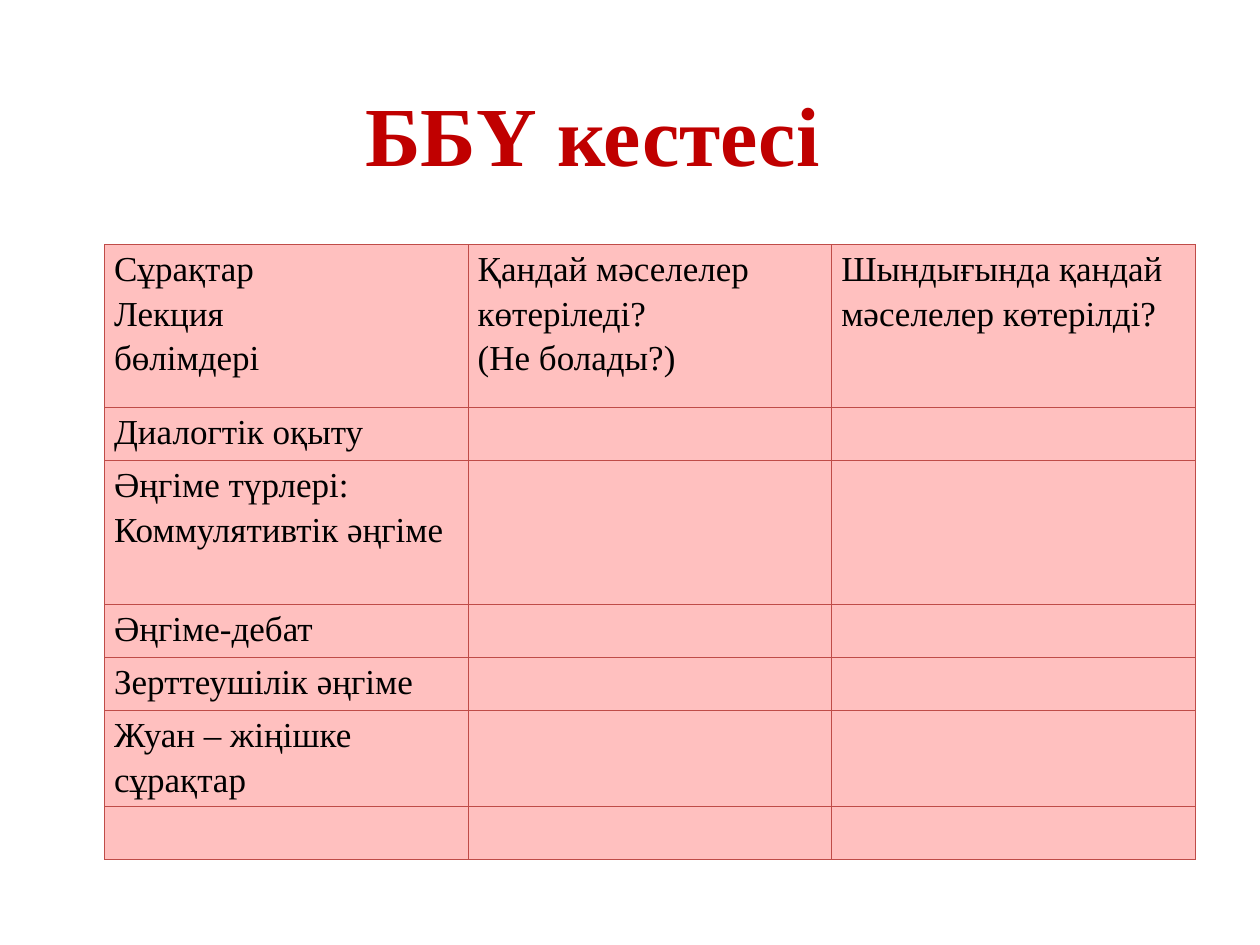
from lxml.etree import SubElement
from pptx import Presentation
from pptx.dml.color import RGBColor
from pptx.enum.text import MSO_ANCHOR, MSO_AUTO_SIZE
from pptx.oxml.ns import qn
from pptx.util import Cm, Pt

TITLE = "ББҮ кестесі"
HEADERS = [
    ["Сұрақтар", "Лекция", "бөлімдері"],
    ["Қандай мәселелер көтеріледі?", "(Не болады?)"],
    ["Шындығында қандай мәселелер көтерілді?"],
]
TOPICS = [  # lines of the first column, row height in cm
    (["Диалогтік оқыту"], 1.07),
    (["Әңгіме түрлері:", "Коммулятивтік әңгіме"], 2.9),
    (["Әңгіме-дебат"], 1.07),
    (["Зерттеушілік әңгіме"], 1.07),
    (["Жуан – жіңішке сұрақтар"], 1.93),
    ([], 1.07),
]
HEADER_HEIGHT = 3.29
COLUMN_WIDTH = 7.33
COLORS = {"title": "C00000", "text": "000000", "cell": "FFC0BF", "border": "BF4C48"}
FONT = "Times New Roman"


def write_text(frame, lines, size, color, bold=False, spacing=1.0):
    for index, line in enumerate(lines):
        paragraph = frame.add_paragraph() if index else frame.paragraphs[0]
        paragraph.line_spacing = spacing
        run = paragraph.add_run()
        run.text = line
        run.font.name = FONT
        run.font.size = Pt(size)
        run.font.bold = bold
        run.font.color.rgb = RGBColor.from_string(COLORS[color])


def add_borders(cell):
    """Put a thin line on all four sides; borders must precede the cell fill."""
    properties = cell._tc.get_or_add_tcPr()
    for side in ("a:lnL", "a:lnR", "a:lnT", "a:lnB"):
        line = SubElement(properties, qn(side), w=str(Pt(0.75)))
        fill = SubElement(line, qn("a:solidFill"))
        SubElement(fill, qn("a:srgbClr"), val=COLORS["border"])


def format_cell(cell):
    cell.margin_left = cell.margin_right = Cm(0.19)
    cell.margin_top = cell.margin_bottom = 0
    add_borders(cell)
    cell.fill.solid()
    cell.fill.fore_color.rgb = RGBColor.from_string(COLORS["cell"])


def add_topic_table(slide):
    rows = [HEADERS] + [[lines, [], []] for lines, _ in TOPICS]
    heights = [HEADER_HEIGHT] + [height for _, height in TOPICS]
    table = slide.shapes.add_table(
        len(rows), len(HEADERS), Cm(2.11), Cm(4.93),
        Cm(COLUMN_WIDTH * len(HEADERS)), Cm(sum(heights)),
    ).table
    for column in table.columns:
        column.width = Cm(COLUMN_WIDTH)
    for row_index, (row, height) in enumerate(zip(rows, heights)):
        table.rows[row_index].height = Cm(height)
        for column_index, lines in enumerate(row):
            cell = table.cell(row_index, column_index)
            format_cell(cell)
            write_text(cell.text_frame, lines, size=20, color="text", spacing=1.15)


def add_title(slide):
    frame = slide.shapes.add_textbox(Cm(7.11), Cm(1.52), Cm(9.75), Cm(2.31)).text_frame
    frame.word_wrap = False
    frame.auto_size = MSO_AUTO_SIZE.SHAPE_TO_FIT_TEXT
    frame.vertical_anchor = MSO_ANCHOR.MIDDLE
    write_text(frame, [TITLE], size=48, color="title", bold=True)


def main():
    presentation = Presentation()
    presentation.slide_width, presentation.slide_height = Cm(25.4), Cm(19.05)
    slide = presentation.slides.add_slide(presentation.slide_layouts[6])
    add_topic_table(slide)
    add_title(slide)
    presentation.save("out.pptx")


if __name__ == "__main__":
    main()
